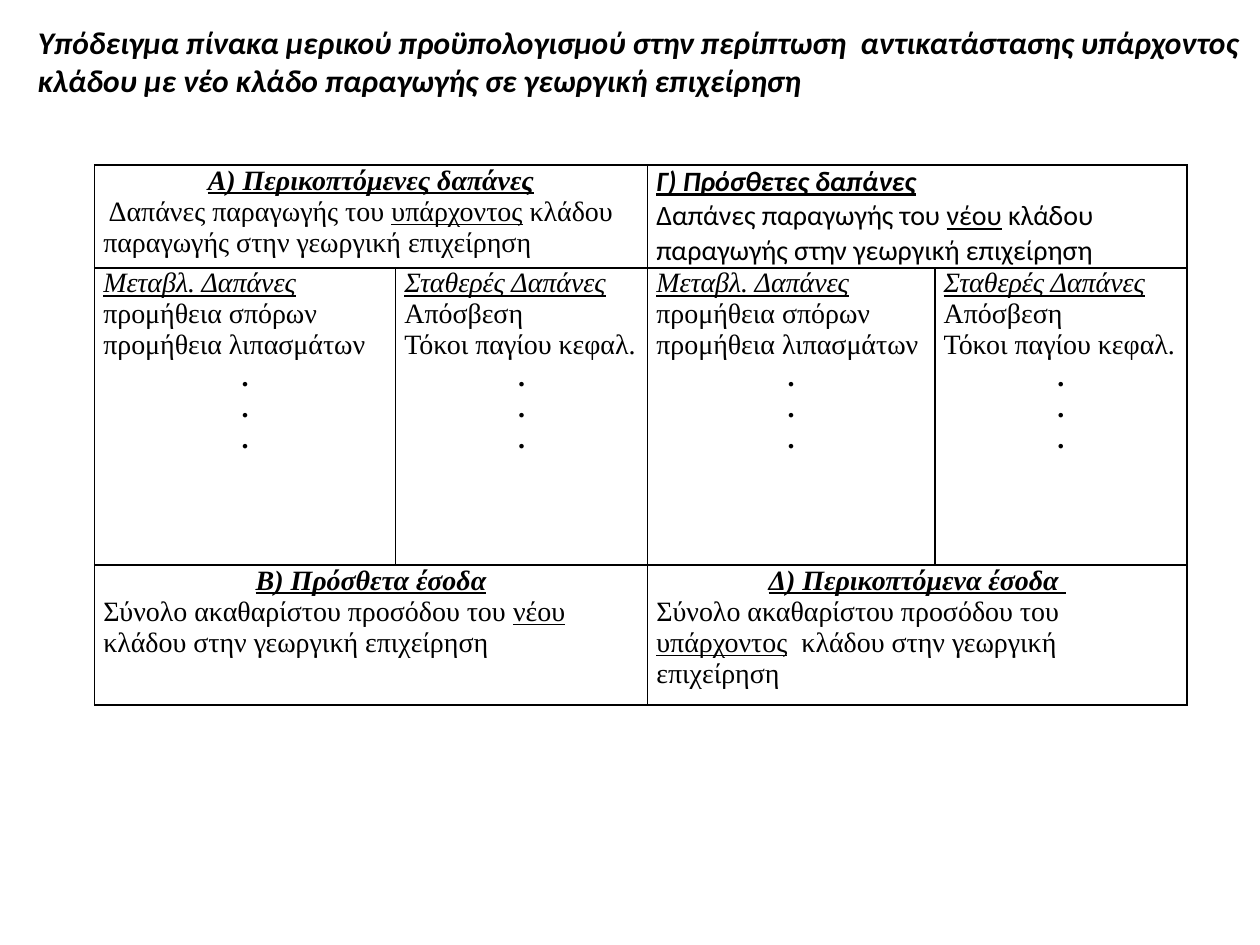
from pptx import Presentation
from pptx import util as u
from pptx.dml.color import RGBColor
from pptx.enum import text
from pptx.oxml import parse_xml
from pptx.oxml.ns import nsdecls

COLORS = {"ink": "000000", "border": "000000"}
SERIF, SANS = "Times New Roman", "Calibri"
PLAIN = {"bold": False, "italic": False, "underline": False}
UNDERLINED = {**PLAIN, "underline": True}
SUBHEADING = {**UNDERLINED, "italic": True}
HEADING = {**SUBHEADING, "bold": True}
DOT = {**PLAIN, "bold": True}
LEFT, CENTER = text.PP_ALIGN.LEFT, text.PP_ALIGN.CENTER

TITLE = ("Υπόδειγμα πίνακα μερικού προϋπολογισμού στην περίπτωση  αντικατάστασης "
         "υπάρχοντος κλάδου με νέο κλάδο παραγωγής σε γεωργική επιχείρηση")
COLUMN_WIDTHS = [2.39, 2, 2.28, 2]
ROW_HEIGHTS = [0.81, 2.36, 1.11]
EXPENSES = " κλάδου παραγωγής στην γεωργική επιχείρηση"
INCOME = "Σύνολο ακαθαρίστου προσόδου του "
SUMMARIES = [
    (0, 0, SERIF, CENTER, 6, "A) Περικοπτόμενες δαπάνες",
     " Δαπάνες παραγωγής του ", "υπάρχοντος", EXPENSES),
    (0, 2, SANS, LEFT, 6, "Γ) Πρόσθετες δαπάνες",
     "Δαπάνες παραγωγής του ", "νέου", EXPENSES),
    (2, 0, SERIF, CENTER, 12, "Β) Πρόσθετα έσοδα",
     INCOME, "νέου", " κλάδου στην γεωργική επιχείρηση"),
    (2, 2, SERIF, CENTER, 12, "Δ) Περικοπτόμενα έσοδα ",
     INCOME, "υπάρχοντος", "  κλάδου στην γεωργική επιχείρηση"),
]
COST_LISTS = [
    ("Μεταβλ. Δαπάνες", "προμήθεια σπόρων", "προμήθεια λιπασμάτων"),
    ("Σταθερές Δαπάνες", "Απόσβεση", "Τόκοι παγίου κεφαλ."),
]


def set_values(target, values):
    for name, value in values.items():
        setattr(target, name, value)


def add_run(paragraph, words, font, size, style):
    run = paragraph.add_run()
    run.text = words
    set_values(run.font, {"name": font, "size": u.Pt(size), **style})
    run.font.color.rgb = RGBColor.from_string(COLORS["ink"])


def write_cell(cell, paragraphs, font, space_before):
    frame = cell.text_frame
    for index, (alignment, runs) in enumerate(paragraphs):
        paragraph = frame.add_paragraph() if index else frame.paragraphs[0]
        set_values(paragraph, {"alignment": alignment,
                               "space_before": u.Pt(0 if index else space_before)})
        for words, style in runs:
            add_run(paragraph, words, font, 16, style)


def format_cell(cell):
    set_values(cell, {"margin_left": u.Inches(0.07), "margin_right": u.Inches(0.07),
                      "margin_top": 0, "margin_bottom": 0})
    properties = cell._tc.get_or_add_tcPr()
    for side in ("lnL", "lnR", "lnT", "lnB"):
        properties.append(parse_xml(
            f'<a:{side} {nsdecls("a")} w="{u.Pt(1)}"><a:solidFill>'
            f'<a:srgbClr val="{COLORS["border"]}"/></a:solidFill></a:{side}>'))
    cell.fill.background()


def add_title(slide, left, top, width, height):
    title = slide.shapes.title
    set_values(title, {"left": u.Inches(left), "top": u.Inches(top),
                       "width": u.Inches(width), "height": u.Inches(height)})
    set_values(title.text_frame, {
        "word_wrap": True, "auto_size": text.MSO_AUTO_SIZE.NONE,
        "vertical_anchor": text.MSO_ANCHOR.TOP,
        "margin_left": u.Inches(0.1), "margin_right": u.Inches(-0.26),
        "margin_top": u.Inches(0.19), "margin_bottom": 0})
    paragraph = title.text_frame.paragraphs[0]
    paragraph.alignment = LEFT
    add_run(paragraph, TITLE, SANS, 18, {"bold": True, "italic": True})


def add_budget_table(slide, left, top, width, height):
    table = slide.shapes.add_table(
        len(ROW_HEIGHTS), len(COLUMN_WIDTHS), u.Inches(left), u.Inches(top),
        u.Inches(width), u.Inches(height)).table
    set_values(table, {"first_row": False, "horz_banding": False})
    for column, column_width in zip(table.columns, COLUMN_WIDTHS):
        column.width = u.Inches(column_width)
    for row, row_height in zip(table.rows, ROW_HEIGHTS):
        row.height = u.Inches(row_height)
    for cell in table.iter_cells():
        format_cell(cell)
    for row, column, font, alignment, space, heading, start, key, end in SUMMARIES:
        cell = table.cell(row, column)
        cell.merge(table.cell(row, column + 1))
        write_cell(cell, [
            (alignment, [(heading, HEADING)]),
            (LEFT, [(start, PLAIN), (key, UNDERLINED), (end, PLAIN)]),
        ], font, space)
    for column, (heading, *items) in enumerate(COST_LISTS * 2):
        paragraphs = [(LEFT, [(heading, SUBHEADING)])]
        paragraphs += [(LEFT, [(item, PLAIN)]) for item in items]
        paragraphs += [(CENTER, [(".", DOT)])] * 3
        write_cell(table.cell(1, column), paragraphs, SERIF, 6)


def main():
    presentation = Presentation()
    set_values(presentation, {"slide_width": u.Inches(10), "slide_height": u.Inches(7.5)})
    slide = presentation.slides.add_slide(presentation.slide_layouts.get_by_name("Title Only"))
    add_budget_table(slide, 0.75, 1.31, sum(COLUMN_WIDTHS), sum(ROW_HEIGHTS))
    add_title(slide, 0.2, -0.01, 9.53, 1.25)
    presentation.save("out.pptx")


if __name__ == "__main__":
    main()
